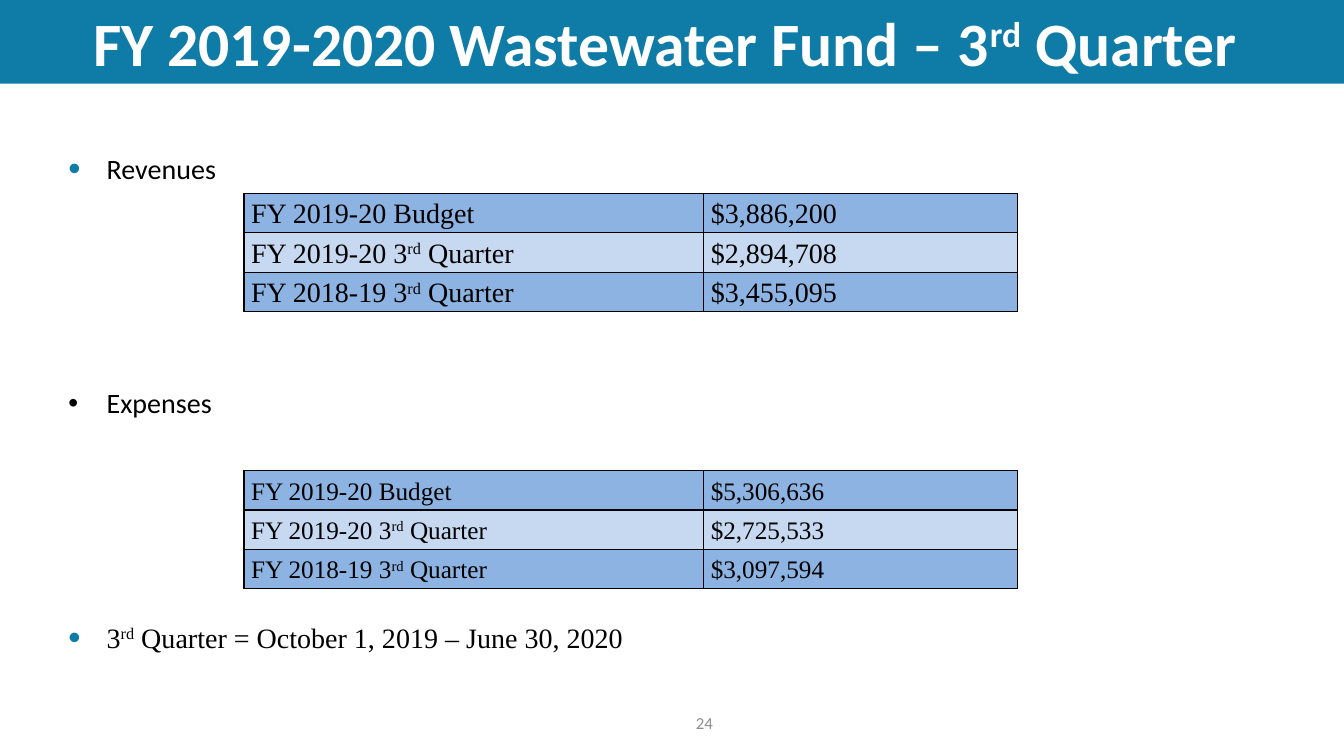
from dataclasses import dataclass

import lxml.etree
import pptx
import pptx.dml.color
import pptx.enum.shapes
import pptx.enum.text
import pptx.oxml.ns
import pptx.util

Inches = pptx.util.Inches
Pt = pptx.util.Pt
ALIGN = pptx.enum.text.PP_ALIGN
MIDDLE = pptx.enum.text.MSO_ANCHOR.MIDDLE

TEAL = "0F7CA7"
BLACK = "000000"
ROW_FILLS = ("8DB3E2", "C6D9F1")


@dataclass
class TextStyle:
    size: float
    font: str = "Calibri"
    color: str = BLACK
    bold: bool = False


@dataclass
class Bullet:
    text: str
    style: TextStyle
    color: str = TEAL
    percent: int = 125


@dataclass
class FundTable:
    top: float
    size: float
    amounts: tuple[str, str, str]


ROW_LABELS = ("FY 2019-20 Budget", "FY 2019-20 3^rd^ Quarter", "FY 2018-19 3^rd^ Quarter")
BULLETS = (
    Bullet("Revenues", TextStyle(20)),
    Bullet("Expenses", TextStyle(20), BLACK, 100),
    Bullet("3^rd^ Quarter = October 1, 2019 – June 30, 2020", TextStyle(20, "Times New Roman")),
)
TABLES = (
    FundTable(1.92, 20, ("$3,886,200", "$2,894,708", "$3,455,095")),
    FundTable(4.67, 18, ("$5,306,636", "$2,725,533", "$3,097,594")),
)


def rgb(value: str) -> pptx.dml.color.RGBColor:
    return pptx.dml.color.RGBColor.from_string(value)


def add_element(parent, tag: str, **attributes: str):
    element = lxml.etree.SubElement(parent, pptx.oxml.ns.qn(tag))
    for name, value in attributes.items():
        element.set(name, value)
    return element


def add_runs(paragraph, text: str, style: TextStyle) -> None:
    """Text between carets is set as superscript."""
    for index, part in enumerate(text.split("^")):
        run = paragraph.add_run()
        run.text = part
        run.font.size = Pt(style.size)
        run.font.name = style.font
        run.font.bold = style.bold
        run.font.color.rgb = rgb(style.color)
        if index % 2:
            run._r.get_or_add_rPr().set("baseline", "30000")


def add_title(slide, text: str) -> None:
    shape = slide.shapes.add_shape(
        pptx.enum.shapes.MSO_SHAPE.RECTANGLE, 0, 0, Inches(13.33), Inches(0.83))
    shape.shadow.inherit = False
    shape.fill.solid()
    shape.fill.fore_color.rgb = rgb(TEAL)
    shape.line.fill.background()
    shape.text_frame.vertical_anchor = MIDDLE
    paragraph = shape.text_frame.paragraphs[0]
    paragraph.alignment = ALIGN.CENTER
    add_runs(paragraph, text, TextStyle(44, color="FFFFFF", bold=True))


def add_bullets(slide, bullets: tuple[Bullet, ...]) -> None:
    box = slide.shapes.add_textbox(Inches(0.58), Inches(1), Inches(12.17), Inches(5.83))
    frame = box.text_frame
    frame.word_wrap = True
    frame.margin_top = Inches(0.5)
    for index, bullet in enumerate(bullets):
        paragraph = frame.add_paragraph() if index else frame.paragraphs[0]
        properties = paragraph._p.get_or_add_pPr()
        properties.set("marL", str(Inches(0.38)))
        properties.set("indent", str(-Inches(0.38)))
        add_element(add_element(properties, "a:buClr"), "a:srgbClr", val=bullet.color)
        add_element(properties, "a:buSzPct", val=str(bullet.percent * 1000))
        add_element(properties, "a:buFont", typeface="Arial")
        add_element(properties, "a:buChar", char="•")
        if index:
            paragraph.space_before = Pt(143.5)
        add_runs(paragraph, bullet.text, bullet.style)


def add_borders(cell) -> None:
    properties = cell._tc.get_or_add_tcPr()
    for side in ("a:lnL", "a:lnR", "a:lnT", "a:lnB"):
        line = add_element(properties, side, w=str(Pt(1)))
        add_element(add_element(line, "a:solidFill"), "a:srgbClr", val=BLACK)


def fill_cell(cell, text: str, fill: str, style: TextStyle) -> None:
    add_borders(cell)
    cell.fill.solid()
    cell.fill.fore_color.rgb = rgb(fill)
    cell.vertical_anchor = MIDDLE
    cell.margin_left = cell.margin_right = Inches(0.07)
    cell.margin_top = cell.margin_bottom = 0
    paragraph = cell.text_frame.paragraphs[0]
    paragraph.alignment = ALIGN.JUSTIFY
    paragraph.line_spacing = 1.08
    add_runs(paragraph, text, style)


def add_fund_table(slide, fund: FundTable) -> None:
    table = slide.shapes.add_table(
        len(ROW_LABELS), 2, Inches(2.42), Inches(fund.top), Inches(7.67), Inches(1.17)).table
    for column, width in zip(table.columns, (4.56, 3.11)):
        column.width = Inches(width)
    style = TextStyle(fund.size, "Times New Roman")
    for row, texts in enumerate(zip(ROW_LABELS, fund.amounts)):
        for column, text in enumerate(texts):
            fill_cell(table.cell(row, column), text, ROW_FILLS[row % 2], style)


def add_page_number(slide, number: str) -> None:
    box = slide.shapes.add_textbox(Inches(6.17), Inches(6.97), Inches(1), Inches(0.4))
    box.text_frame.word_wrap = True
    box.text_frame.vertical_anchor = MIDDLE
    paragraph = box.text_frame.paragraphs[0]
    paragraph.alignment = ALIGN.RIGHT
    add_runs(paragraph, number, TextStyle(12, color="8C8C8C"))


def main() -> None:
    presentation = pptx.Presentation()
    presentation.slide_width = Inches(13.33)
    presentation.slide_height = Inches(7.5)
    slide = presentation.slides.add_slide(presentation.slide_layouts[6])

    # Title band and body
    add_title(slide, "FY 2019-2020 Wastewater Fund – 3^rd^ Quarter ")
    add_bullets(slide, BULLETS)
    add_page_number(slide, "24")

    # Revenue and expense tables
    for fund in TABLES:
        add_fund_table(slide, fund)

    presentation.save("out.pptx")


if __name__ == "__main__":
    main()
